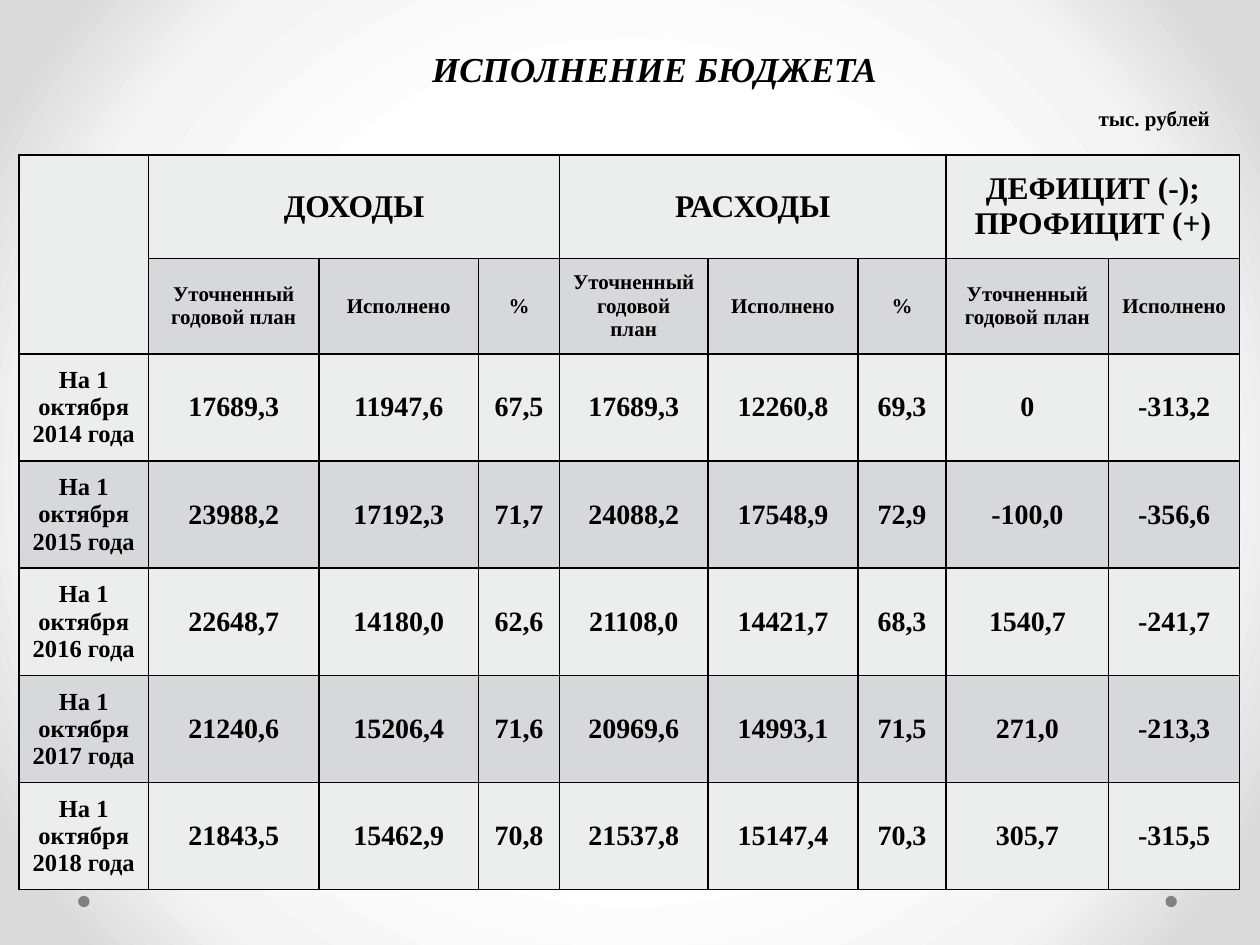
import pptx
import pptx.dml.color
import pptx.enum.shapes
import pptx.enum.text
import pptx.oxml
import pptx.oxml.ns
import pptx.util
from lxml import etree

Inches = pptx.util.Inches
Pt = pptx.util.Pt
RGBColor = pptx.dml.color.RGBColor
qn = pptx.oxml.ns.qn
PP_ALIGN = pptx.enum.text.PP_ALIGN
MSO_ANCHOR = pptx.enum.text.MSO_ANCHOR

FONT = "Times New Roman"
BLACK = RGBColor(0x00, 0x00, 0x00)
GRAY = RGBColor(0x80, 0x80, 0x80)
LIGHT_ROW = RGBColor(0xEC, 0xED, 0xED)
DARK_ROW = RGBColor(0xD6, 0xD8, 0xD9)
BACKGROUND_STOPS = [
    (50, RGBColor(0xFF, 0xFF, 0xFF)),
    (76, RGBColor(0xF4, 0xF4, 0xF4)),
    (92, RGBColor(0xDA, 0xDA, 0xDA)),
]

COLUMN_WIDTHS = [1.03, 1.35, 1.27, 0.64, 1.18, 1.19, 0.7, 1.29, 1.04]
HEADER_HEIGHTS = [0.82, 0.76]
YEAR_HEIGHT = 0.85
GROUPS = [  # heading, first column, last column
    ("ДОХОДЫ", 1, 3),
    ("РАСХОДЫ", 4, 6),
    ("ДЕФИЦИТ (-);\nПРОФИЦИТ (+)", 7, 8),
]
MEASURES = ["Уточненный годовой план", "Исполнено", "%"]
YEARS = {
    2014: ["17689,3", "11947,6", "67,5", "17689,3", "12260,8", "69,3", "0", "-313,2"],
    2015: ["23988,2", "17192,3", "71,7", "24088,2", "17548,9", "72,9", "-100,0", "-356,6"],
    2016: ["22648,7", "14180,0", "62,6", "21108,0", "14421,7", "68,3", "1540,7", "-241,7"],
    2017: ["21240,6", "15206,4", "71,6", "20969,6", "14993,1", "71,5", "271,0", "-213,3"],
    2018: ["21843,5", "15462,9", "70,8", "21537,8", "15147,4", "70,3", "305,7", "-315,5"],
}


def write_text(text_frame, text, size, alignment, italic=False):
    text_frame.text = text
    for paragraph in text_frame.paragraphs:
        paragraph.alignment = alignment
        font = paragraph.font
        font.name, font.size = FONT, Pt(size)
        font.bold, font.italic = True, italic
        font.color.rgb = BLACK


def set_background(slide):
    """Radial gradient from a white centre to gray corners."""
    slide.background.fill.solid()
    properties = slide.element.find(".//" + qn("p:bgPr"))
    properties.remove(properties.find(qn("a:solidFill")))
    gradient = etree.Element(qn("a:gradFill"), rotWithShape="1")
    stops = etree.SubElement(gradient, qn("a:gsLst"))
    for position, color in BACKGROUND_STOPS:
        stop = etree.SubElement(stops, qn("a:gs"), pos=str(position * 1000))
        etree.SubElement(stop, qn("a:srgbClr"), val=str(color))
    circle = etree.SubElement(gradient, qn("a:path"), {"path": "circle"})
    etree.SubElement(circle, qn("a:fillToRect"), l="50000", t="50000", r="50000", b="50000")
    properties.insert(0, gradient)


def add_dot(slide, left, top, size):
    dot = slide.shapes.add_shape(
        pptx.enum.shapes.MSO_SHAPE.OVAL, Inches(left), Inches(top), Inches(size), Inches(size))
    dot.shadow.inherit = False
    dot.fill.solid()
    dot.fill.fore_color.rgb = GRAY
    dot.line.fill.background()


def place_title(slide, left, top, width, height):
    title = slide.shapes.title
    title.left, title.top = Inches(left), Inches(top)
    title.width, title.height = Inches(width), Inches(height)
    title.text_frame.vertical_anchor = MSO_ANCHOR.MIDDLE
    write_text(title.text_frame, "ИСПОЛНЕНИЕ БЮДЖЕТА", 20, PP_ALIGN.CENTER, italic=True)


def add_unit_label(slide, left, top, width, height):
    label = slide.shapes.add_textbox(Inches(left), Inches(top), Inches(width), Inches(height))
    label.text_frame.word_wrap = False
    write_text(label.text_frame, "тыс. рублей", 12, PP_ALIGN.LEFT)


def format_cell(cell, color):
    """Black one-point borders on every side, a plain fill, text in the middle."""
    properties = cell._tc.get_or_add_tcPr()
    for side in ("a:lnL", "a:lnR", "a:lnT", "a:lnB"):
        border = etree.SubElement(properties, qn(side), w=str(Pt(1)))
        fill = etree.SubElement(border, qn("a:solidFill"))
        etree.SubElement(fill, qn("a:srgbClr"), val=str(BLACK))
    cell.fill.solid()
    cell.fill.fore_color.rgb = color
    cell.vertical_anchor = MSO_ANCHOR.MIDDLE


def add_budget_table(slide, left, top):
    heights = HEADER_HEIGHTS + [YEAR_HEIGHT] * len(YEARS)
    table = slide.shapes.add_table(
        len(heights), len(COLUMN_WIDTHS), Inches(left), Inches(top),
        Inches(sum(COLUMN_WIDTHS)), Inches(sum(heights))).table
    for column, width in zip(table.columns, COLUMN_WIDTHS):
        column.width = Inches(width)
    for index, (row, height) in enumerate(zip(table.rows, heights)):
        row.height = Inches(height)
        for cell in row.cells:
            format_cell(cell, DARK_ROW if index % 2 else LIGHT_ROW)

    def write_cell(row, column, text, size):
        write_text(table.cell(row, column).text_frame, text, size, PP_ALIGN.CENTER)

    corner = table.cell(0, 0)
    corner.merge(table.cell(1, 0))
    corner.fill.fore_color.rgb = LIGHT_ROW
    for heading, first, last in GROUPS:
        table.cell(0, first).merge(table.cell(0, last))
        write_cell(0, first, heading, 18)
        for column, measure in zip(range(first, last + 1), MEASURES):
            write_cell(1, column, measure, 12)
    for row, (year, values) in enumerate(YEARS.items(), start=len(HEADER_HEIGHTS)):
        write_cell(row, 0, f"На 1 октября {year} года", 14)
        for column, value in enumerate(values, start=1):
            write_cell(row, column, value, 16)


def main():
    presentation = pptx.Presentation()
    presentation.slide_width, presentation.slide_height = Inches(10), Inches(7.5)
    slide = presentation.slides.add_slide(presentation.slide_layouts[5])
    set_background(slide)
    for left in (0.62, 9.25):
        add_dot(slide, left, 7.11, 0.09)
    add_budget_table(slide, 0.15, 1.23)
    place_title(slide, 3.11, 0.32, 4.17, 0.44)
    add_unit_label(slide, 8.62, 0.79, 1.18, 0.3)
    presentation.save("out.pptx")


if __name__ == "__main__":
    main()
